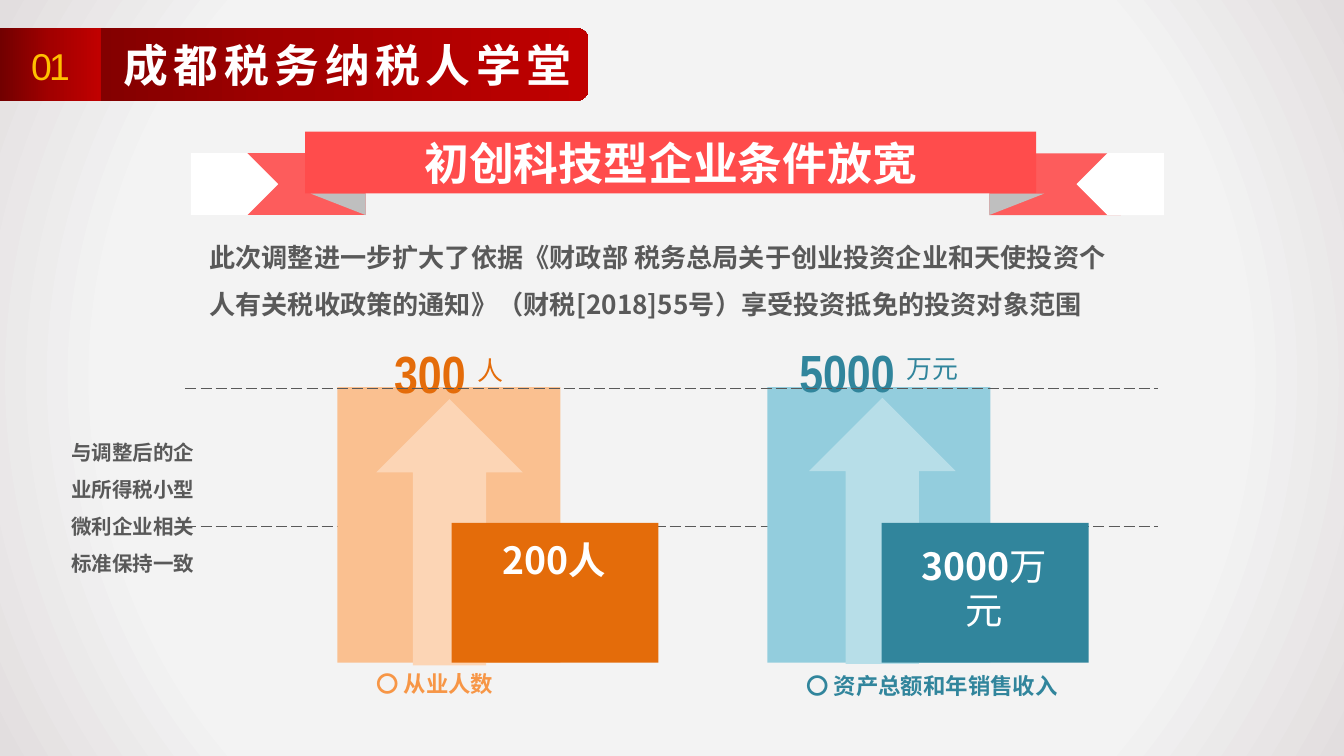
import pptx
import pptx.util
from lxml import etree
from pptx.dml.color import RGBColor
from pptx.enum.dml import MSO_LINE
from pptx.enum.shapes import MSO_CONNECTOR, MSO_SHAPE
from pptx.enum.text import MSO_ANCHOR, MSO_AUTO_SIZE, PP_ALIGN
from pptx.oxml import parse_xml
from pptx.oxml.ns import nsdecls, qn
from pptx.util import Inches, Pt

SANS = "Noto Sans CJK SC"
WHITE = RGBColor(0xFF, 0xFF, 0xFF)
GRAY = RGBColor(0x59, 0x59, 0x59)
FOLD_GRAY = RGBColor(0xBF, 0xBF, 0xBF)
GOLD = RGBColor(0xFF, 0xC0, 0x00)
RIBBON_RED = RGBColor(0xFF, 0x4C, 0x4C)
ORANGE = RGBColor(0xE4, 0x6C, 0x0A)
LABEL_ORANGE = RGBColor(0xF7, 0x96, 0x46)
LIGHT_ORANGE = RGBColor(0xFA, 0xC0, 0x90)
PALE_ORANGE = RGBColor(0xFC, 0xD5, 0xB5)
TEAL = RGBColor(0x31, 0x85, 0x9C)
LIGHT_TEAL = RGBColor(0x93, 0xCD, 0xDD)
PALE_TEAL = RGBColor(0xB7, 0xDE, 0xE8)

# Content
SECTION_NUMBER = "01"
TITLE = "成都税务纳税人学堂"
RIBBON_TEXT = "初创科技型企业条件放宽"
INTRO = ("此次调整进一步扩大了依据《财政部 税务总局关于创业投资企业和天使投资个人"
         "有关税收政策的通知》（财税[2018]55号）享受投资抵免的投资对象范围")
SIDE_NOTE = "与调整后的企业所得税小型微利企业相关标准保持一致"
# Each old value is a list of (text, bold) runs
COMPARISONS = [
    dict(left=2.51, arrow_left=2.8, arrow_top=2.97, new="300", unit="人", new_top=2.49,
         old=[("200人", True)], old_top=3.95, label="〇 从业人数", label_top=4.94,
         dark=ORANGE, light=LIGHT_ORANGE, pale=PALE_ORANGE, label_color=LABEL_ORANGE),
    dict(left=5.71, arrow_left=6.02, arrow_top=2.96, new="5000", unit="万元", new_top=2.48,
         old=[("3000", True), ("万元", False)], old_top=3.99,
         label="〇 资产总额和年销售收入", label_top=4.95,
         dark=TEAL, light=LIGHT_TEAL, pale=PALE_TEAL, label_color=TEAL),
]
SLIDE_WIDTH = 10
SLIDE_HEIGHT = SLIDE_WIDTH * 9 / 16
RED_STOPS = [(0, "720000"), (50, "A20000"), (100, "C00000")]
PAGE_STOPS = [(0, "F5F5F5"), (73, "F3F3F3"), (100, "E2DEDF")]
LINEAR = '<a:lin ang="0" scaled="0"/>'
RADIAL = ('<a:path path="circle"><a:fillToRect l="50000" t="50000" '
          'r="50000" b="50000"/></a:path>')

presentation = pptx.Presentation()
presentation.slide_width = Inches(SLIDE_WIDTH)
presentation.slide_height = Inches(SLIDE_HEIGHT)
slide = presentation.slides.add_slide(presentation.slide_layouts[5])


def add_shape(kind, left, top, width, height, color=None, rotation=0):
    shape = slide.shapes.add_shape(kind, Inches(left), Inches(top),
                                   Inches(width), Inches(height))
    shape.shadow.inherit = False
    shape.line.fill.background()
    shape.rotation = rotation
    if color is not None:
        shape.fill.solid()
        shape.fill.fore_color.rgb = color
    return shape


def set_gradient(shape, stops, direction):
    stop_xml = "".join(f'<a:gs pos="{position * 1000}"><a:srgbClr val="{color}"/></a:gs>'
                       for position, color in stops)
    gradient = parse_xml(f'<a:gradFill {nsdecls("a")} rotWithShape="1">'
                         f'<a:gsLst>{stop_xml}</a:gsLst>{direction}</a:gradFill>')
    shape.element.spPr.find(qn("a:prstGeom")).addnext(gradient)


def set_font(font, size, color, name=SANS, bold=True, spacing=None, baseline=None):
    font.size, font.bold, font.name = Pt(size), bold, name
    font.color.rgb = color
    properties = font._element
    east_asian = etree.Element(qn("a:ea"), typeface=name)
    properties.find(qn("a:latin")).addnext(east_asian)
    if spacing is not None:
        properties.set("spc", str(int(spacing * 100)))
    if baseline is not None:
        properties.set("baseline", str(baseline * 1000))


def add_text_box(left, top, width, height, text="", align=PP_ALIGN.LEFT, line_spacing=None):
    box = slide.shapes.add_textbox(Inches(left), Inches(top), Inches(width), Inches(height))
    box.text_frame.word_wrap = True
    paragraph = box.text_frame.paragraphs[0]
    paragraph.text = text
    paragraph.alignment = align
    if line_spacing:
        paragraph.line_spacing = line_spacing
    return box, paragraph


def add_run(paragraph, text, size, color, **options):
    run = paragraph.add_run()
    run.text = text
    set_font(run.font, size, color, **options)


def add_dashed_line(y):
    line = slide.shapes.add_connector(MSO_CONNECTOR.STRAIGHT, Inches(1.38), Inches(y),
                                      Inches(8.62), Inches(y))
    line.line.color.rgb = GRAY
    line.line.width = Pt(0.75)
    line.line.dash_style = MSO_LINE.LONG_DASH
    etree.SubElement(line._element.spPr, qn("a:effectLst"))


# Page background and header band
set_gradient(add_shape(MSO_SHAPE.RECTANGLE, 0, 0, SLIDE_WIDTH, SLIDE_HEIGHT),
             PAGE_STOPS, RADIAL)
set_gradient(add_shape(MSO_SHAPE.ROUNDED_RECTANGLE, 0.01, 0.21, 4.37, 0.54),
             RED_STOPS, LINEAR)
set_gradient(add_shape(MSO_SHAPE.RECTANGLE, 0, 0.21, 0.75, 0.54), RED_STOPS, LINEAR)
box, paragraph = add_text_box(0, 0.22, 0.75, 0.53, SECTION_NUMBER, PP_ALIGN.CENTER)
box.text_frame.vertical_anchor = MSO_ANCHOR.MIDDLE
set_font(paragraph.font, 20, GOLD, name="Arial", bold=False, spacing=-1.5)

# Lower level line, then the bars over it
add_dashed_line(3.92)
for item in COMPARISONS:
    left = item["left"]
    add_shape(MSO_SHAPE.RECTANGLE, left, 2.88, 1.66, 2.05, item["light"])
    add_shape(MSO_SHAPE.UP_ARROW, item["arrow_left"], item["arrow_top"], 1.09, 1.98,
              item["pale"])
    add_shape(MSO_SHAPE.RECTANGLE, left + 0.85, 3.89, 1.54, 1.04, item["dark"])

    box, paragraph = add_text_box(left, item["new_top"], 1.66, 0.57, align=PP_ALIGN.CENTER)
    add_run(paragraph, item["new"] + " ", 28, item["dark"], name="Arial Narrow")
    add_run(paragraph, item["unit"], 24, item["dark"], bold=False, baseline=30)

    box, paragraph = add_text_box(left + 0.94, item["old_top"], 1.35, 0.43,
                                  align=PP_ALIGN.CENTER)
    for text, bold in item["old"]:
        add_run(paragraph, text, 20, WHITE, bold=bold)

    box, paragraph = add_text_box(left, item["label_top"], 2.57, 0.3, item["label"])
    box.text_frame.margin_left = Inches(0.29)
    set_font(paragraph.font, 12, item["label_color"])

# Introduction
box, paragraph = add_text_box(1.46, 1.63, 6.96, 0.8, INTRO, line_spacing=1.5)
set_font(paragraph.font, 14, GRAY)

# Ribbon: tails with notches, front band, folds
for tail_left, notch_left, rotation in [(1.74, 1.42, 0), (7.36, 8.01, 180)]:
    tail = add_shape(MSO_SHAPE.RECTANGLE, tail_left, 1.14, 0.98, 0.46, RIBBON_RED, rotation)
    tail_color = tail.element.spPr.find(qn("a:solidFill"))[0]
    etree.SubElement(tail_color, qn("a:alpha"), val="90000")
    add_shape(MSO_SHAPE.PENTAGON, notch_left, 1.14, 0.65, 0.46, WHITE, rotation)
band = add_shape(MSO_SHAPE.RECTANGLE, 2.27, 0.98, 5.44, 0.46, RIBBON_RED)
band.text_frame.vertical_anchor = MSO_ANCHOR.MIDDLE
paragraph = band.text_frame.paragraphs[0]
paragraph.text = RIBBON_TEXT
paragraph.alignment = PP_ALIGN.CENTER
set_font(paragraph.font, 24, WHITE)
for fold_left, flipped in [(2.31, False), (7.36, True)]:
    fold = add_shape(MSO_SHAPE.RIGHT_TRIANGLE, fold_left, 1.44, 0.41, 0.16, FOLD_GRAY, 180)
    if flipped:
        fold.element.spPr.find(qn("a:xfrm")).set("flipH", "1")

# Upper level line and side note
add_dashed_line(2.89)
box, paragraph = add_text_box(0.43, 3.13, 1.22, 1.2, SIDE_NOTE, line_spacing=1.5)
set_font(paragraph.font, 11, GRAY)

# Title, brought in front of the header band
title = slide.shapes.title
title.left, title.top = Inches(0.82), Inches(0.23)
title.width, title.height = Inches(5.42), Inches(0.51)
title.text_frame.text = TITLE
title.text_frame.auto_size = MSO_AUTO_SIZE.NONE
title.text_frame.vertical_anchor = MSO_ANCHOR.TOP
paragraph = title.text_frame.paragraphs[0]
paragraph.alignment = PP_ALIGN.LEFT
set_font(paragraph.font, 24, WHITE, spacing=3)
title.element.getparent().append(title.element)

presentation.save("out.pptx")
